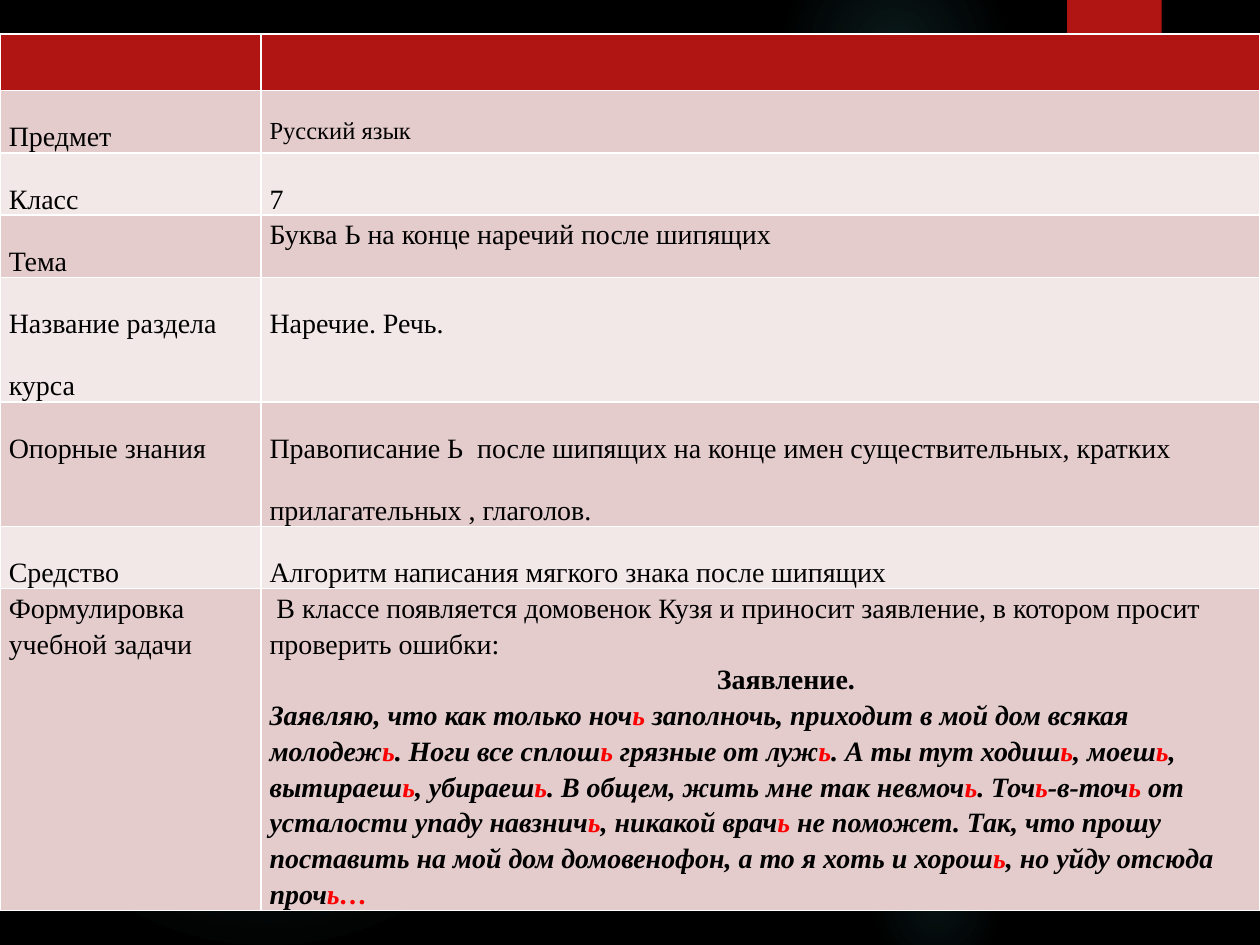
import pptx
import pptx.dml.color
import pptx.enum.shapes
import pptx.oxml
import pptx.oxml.ns
import pptx.util
from pptx.util import Inches

RGB = pptx.dml.color.RGBColor
BLACK = RGB(0, 0, 0)
RED = RGB(0xFF, 0, 0)
BRICK = RGB(0xB0, 0x15, 0x13)
ROSE = RGB(0xE4, 0xCC, 0xCC)
PALE = RGB(0xF2, 0xE8, 0xE7)
TEAL = RGB(0x50, 0xB9, 0xC1)
FONT = "Times New Roman"
SHAPE = pptx.enum.shapes.MSO_SHAPE

# Left, top, size; then (position, opacity) stops in percent
GLOWS = [
    (6.22, -0.5, 1.75, [(0, 14), (36, 7), (73, 0)]),
    (6.89, 6.67, 1.08, [(0, 9), (36, 5), (66, 0)]),
    (-0.17, 2.92, 4.58, [(0, 11), (36, 10), (75, 0)]),
]

COLS = [2.07, 7.93]
HEAD = 0.45
# Height, label, its line spacing, value, its line spacing, value size
ROWS = [
    (0.45, "Предмет", 2, "Русский язык", 2, 14),
    (0.45, "Класс", 2, "7", 2, 16),
    (0.45, "Тема", 2, "Буква Ь на конце наречий после шипящих", 1.15, 16),
    (0.45, "Название раздела курса", 2, "Наречие. Речь.", 2, 16),
    (0.45, "Опорные знания", 2,
     "Правописание Ь  после шипящих на конце имен существительных, "
     "кратких прилагательных , глаголов.", 2, 16),
    (0.41, "Средство", 2,
     "Алгоритм написания мягкого знака после шипящих", 2, 16),
    (0.45 + 1.9, "Формулировка учебной задачи", 1.15,
     " В классе появляется домовенок Кузя и приносит заявление, "
     "в котором просит проверить ошибки:", 1.15, 16),
]
TITLE = "Заявление."
# Parts between bars are red
LETTER = (
    "Заявляю, что как только ноч|ь| заполночь, приходит в мой дом всякая "
    "молодеж|ь|. Ноги все сплош|ь| грязные от луж|ь|. А ты тут ходиш|ь|, "
    "моеш|ь|, вытираеш|ь|, убираеш|ь|. В общем, жить мне так невмоч|ь|. "
    "Точ|ь|-в-точ|ь| от усталости упаду навзнич|ь|, никакой врач|ь| не "
    "поможет. Так, что прошу поставить на мой дом домовенофон, а то я хоть "
    "и хорош|ь|, но уйду отсюда проч|ь…|"
)


def add_glow(slide, left, top, size, stops):
    """Add a circle whose colour fades out from its centre."""
    glow = slide.shapes.add_shape(SHAPE.OVAL, Inches(left), Inches(top),
                                  Inches(size), Inches(size))
    glow.shadow.inherit = False
    glow.line.fill.background()
    marks = "".join(
        f'<a:gs pos="{pos * 1000}"><a:srgbClr val="{TEAL}">'
        f'<a:alpha val="{alpha * 1000}"/></a:srgbClr></a:gs>'
        for pos, alpha in stops)
    fade = pptx.oxml.parse_xml(
        f'<a:gradFill {pptx.oxml.ns.nsdecls("a")}><a:gsLst>{marks}</a:gsLst>'
        '<a:path path="circle"><a:fillToRect l="50000" t="50000" r="50000" '
        'b="50000"/></a:path></a:gradFill>')
    glow.fill.solid()
    props = glow.element.spPr
    props.replace(props.find(pptx.oxml.ns.qn("a:solidFill")), fade)


def add_decor(slide):
    slide.background.fill.solid()
    slide.background.fill.fore_color.rgb = BLACK
    for glow in GLOWS:
        add_glow(slide, *glow)
    tab = slide.shapes.add_shape(SHAPE.RECTANGLE, Inches(8.47), 0,
                                 Inches(0.75), Inches(1.2))
    tab.shadow.inherit = False
    tab.fill.solid()
    tab.fill.fore_color.rgb = BRICK
    tab.line.fill.background()


def write(para, text, space, size=16, bold=None, italic=None):
    """Fill a paragraph, with the parts between bars in red."""
    para.line_spacing = space
    for i, part in enumerate(text.split("|")):
        if part:
            run = para.add_run()
            run.text = part
            font = run.font
            font.name, font.size = FONT, pptx.util.Pt(size)
            font.bold, font.italic = bold, italic
            font.color.rgb = RED if i % 2 else BLACK


def paint(cell, color):
    cell.fill.solid()
    cell.fill.fore_color.rgb = color


def add_plan(slide, left, top, width):
    high = HEAD + sum(row[0] for row in ROWS)
    table = slide.shapes.add_table(len(ROWS) + 1, 2, Inches(left), Inches(top),
                                   Inches(width), Inches(high)).table
    for col, share in zip(table.columns, COLS):
        col.width = Inches(width * share / sum(COLS))
    table.rows[0].height = Inches(HEAD)
    for cell in table.rows[0].cells:
        paint(cell, BRICK)

    for i, (tall, label, gap, value, space, size) in enumerate(ROWS, 1):
        row = table.rows[i]
        row.height = Inches(tall)
        for cell in row.cells:
            paint(cell, ROSE if i % 2 else PALE)
            cell.margin_left = cell.margin_right = Inches(0.07)
            cell.margin_top = cell.margin_bottom = 0
        name, body = row.cells
        write(name.text_frame.paragraphs[0], label, gap)
        write(body.text_frame.paragraphs[0], value, space, size)

    frame = table.cell(len(ROWS), 1).text_frame
    title = frame.add_paragraph()
    write(title, TITLE, 1.15, bold=True)
    title._p.get_or_add_pPr().set("marL", str(Inches(3.55)))
    write(frame.add_paragraph(), LETTER, 1.15, bold=True, italic=True)


def main():
    deck = pptx.Presentation()
    deck.slide_width, deck.slide_height = Inches(10), Inches(7.5)
    slide = deck.slides.add_slide(deck.slide_layouts[6])
    add_decor(slide)
    add_plan(slide, 0, 0.27, 10)
    deck.save("out.pptx")


if __name__ == "__main__":
    main()
